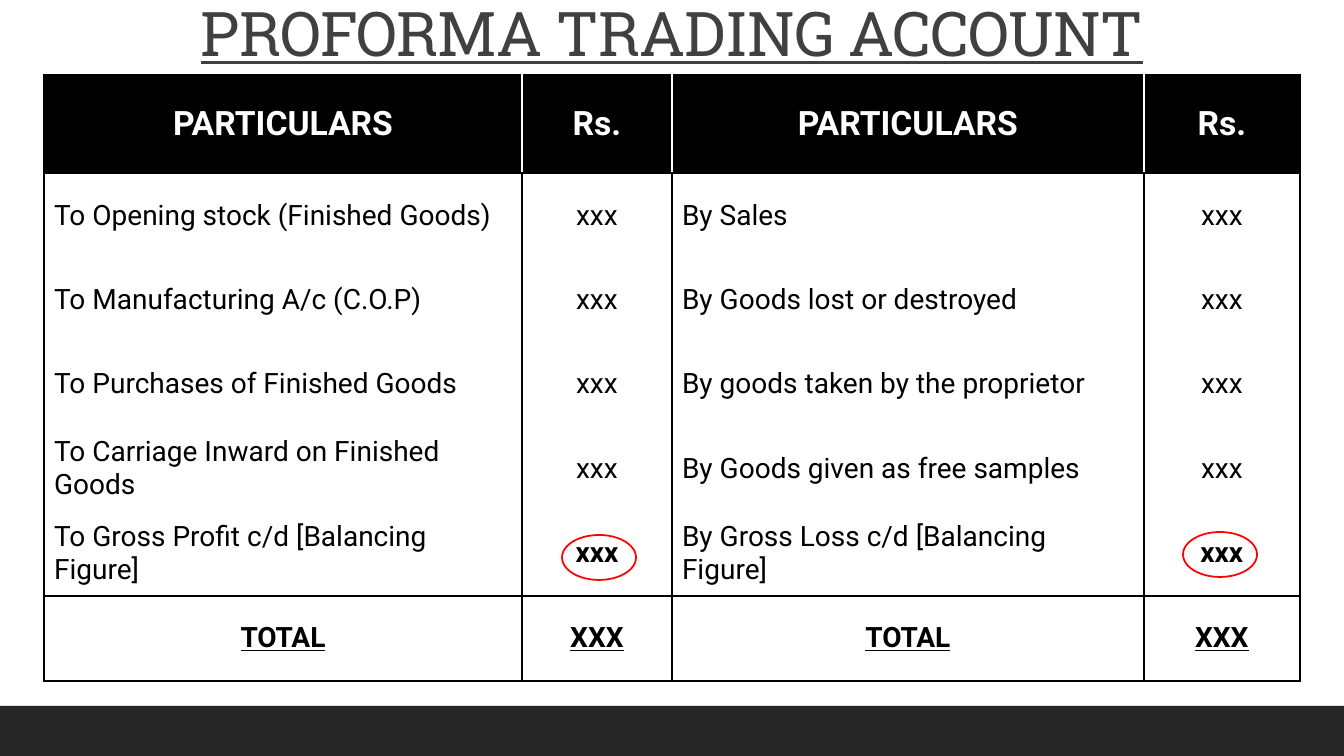
from lxml import etree
from pptx import Presentation
from pptx import util as u
from pptx.dml.color import RGBColor
from pptx.enum import shapes, text
from pptx.oxml import ns

EMU_PER_PX = 914400 / 100.8
BLACK, WHITE = "000000", "FFFFFF"
COLUMNS = [478, 150, 472, 156]
ROWS = [98, 85, 84, 85, 84, 85, 85]
ENTRIES = [
    ("To Opening stock (Finished Goods)", "By Sales"),
    ("To Manufacturing A/c (C.O.P)", "By Goods lost or destroyed"),
    ("To Purchases of Finished Goods", "By goods taken by the proprietor"),
    ("To Carriage Inward on Finished Goods", "By Goods given as free samples"),
    ("To Gross Profit c/d [Balancing Figure]", "By Gross Loss c/d [Balancing Figure]"),
]


def px(length):
    return u.Emu(round(length * EMU_PER_PX))


def color(value):
    return RGBColor.from_string(value)


def add_span(para, words, size, ink, face="Roboto", bold=False, underline=False):
    span = para.add_run()
    span.text = words
    font = span.font
    font.name, font.size, font.bold = face, u.Pt(size), bold
    font.underline = underline
    font.color.rgb = color(ink)
    return span


def add_preset(page, kind, left, top, width, height, fill=None, line=None):
    shape = page.shapes.add_shape(kind, px(left), px(top), px(width), px(height))
    shape.shadow.inherit = False
    if fill:
        shape.fill.solid()
        shape.fill.fore_color.rgb = color(fill)
    else:
        shape.fill.background()
    if line:
        shape.line.color.rgb = color(line)
        shape.line.width = u.Pt(1.25)
    else:
        shape.line.fill.background()


def set_title(page, words):
    box = page.shapes.title
    box.left, box.top, box.width, box.height = px(0), px(-10), px(1344), px(84)
    frame = box.text_frame
    frame.auto_size = text.MSO_AUTO_SIZE.NONE
    frame.word_wrap = True
    frame.vertical_anchor = text.MSO_ANCHOR.MIDDLE
    para = frame.paragraphs[0]
    para.alignment = text.PP_ALIGN.CENTER
    span = add_span(para, words, 44, "404040", "Roboto Slab", underline=True)
    span._r.get_or_add_rPr().set("spc", "-50")


def set_borders(cell, edges):
    properties = cell._tc.get_or_add_tcPr()
    for side in "LRTB":
        line = etree.SubElement(properties, ns.qn(f"a:ln{side}"), w=str(u.Pt(1.5)))
        if edges[side]:
            fill = etree.SubElement(line, ns.qn("a:solidFill"))
            etree.SubElement(fill, ns.qn("a:srgbClr"), val=edges[side])
        else:
            etree.SubElement(line, ns.qn("a:noFill"))


def cell_edges(row, column):
    header, total = row == 0, row == len(ROWS) - 1
    inner = WHITE if header else BLACK
    return {
        "L": BLACK if column == 0 else inner,
        "R": BLACK if column == len(COLUMNS) - 1 else inner,
        "T": BLACK if header or row == 1 or total else None,
        "B": BLACK if header or row >= len(ROWS) - 2 else None,
    }


def fill_cell(cell, words, row, column):
    header, total = row == 0, row == len(ROWS) - 1
    amount = column % 2 == 1
    balancing = amount and row == len(ENTRIES)
    set_borders(cell, cell_edges(row, column))
    if header:
        cell.fill.solid()
        cell.fill.fore_color.rgb = color(BLACK)
    else:
        cell.fill.background()
    cell.vertical_anchor = text.MSO_ANCHOR.MIDDLE
    para = cell.text_frame.paragraphs[0]
    centred = header or total or amount
    para.alignment = text.PP_ALIGN.CENTER if centred else text.PP_ALIGN.LEFT
    add_span(para, words, 24 if header else 20, WHITE if header else BLACK,
             bold=header or total or balancing, underline=total)


def add_account(page):
    frame = page.shapes.add_table(len(ROWS), len(COLUMNS), px(44), px(75),
                                  px(sum(COLUMNS)), px(sum(ROWS)))
    table = frame.table
    table.first_row = table.horz_banding = False
    for column, width in zip(table.columns, COLUMNS):
        column.width = px(width)
    for row, height in zip(table.rows, ROWS):
        row.height = px(height)
    lines = [["PARTICULARS", "Rs."] * 2]
    lines += [[debit, "xxx", credit, "xxx"] for debit, credit in ENTRIES]
    lines.append(["TOTAL", "XXX"] * 2)
    for row, line in enumerate(lines):
        for column, words in enumerate(line):
            fill_cell(table.cell(row, column), words, row, column)


def main():
    deck = Presentation()
    deck.slide_width, deck.slide_height = px(1344), px(756)
    page = deck.slides.add_slide(deck.slide_layouts[5])
    add_preset(page, shapes.MSO_SHAPE.RECTANGLE, 0, 706, 1344, 50, fill="262626")
    set_title(page, "PROFORMA TRADING ACCOUNT")
    add_account(page)
    for left, top in [(1183, 532), (562, 535)]:
        add_preset(page, shapes.MSO_SHAPE.OVAL, left, top, 74, 45, line="FF0000")
    deck.save("out.pptx")


if __name__ == "__main__":
    main()
